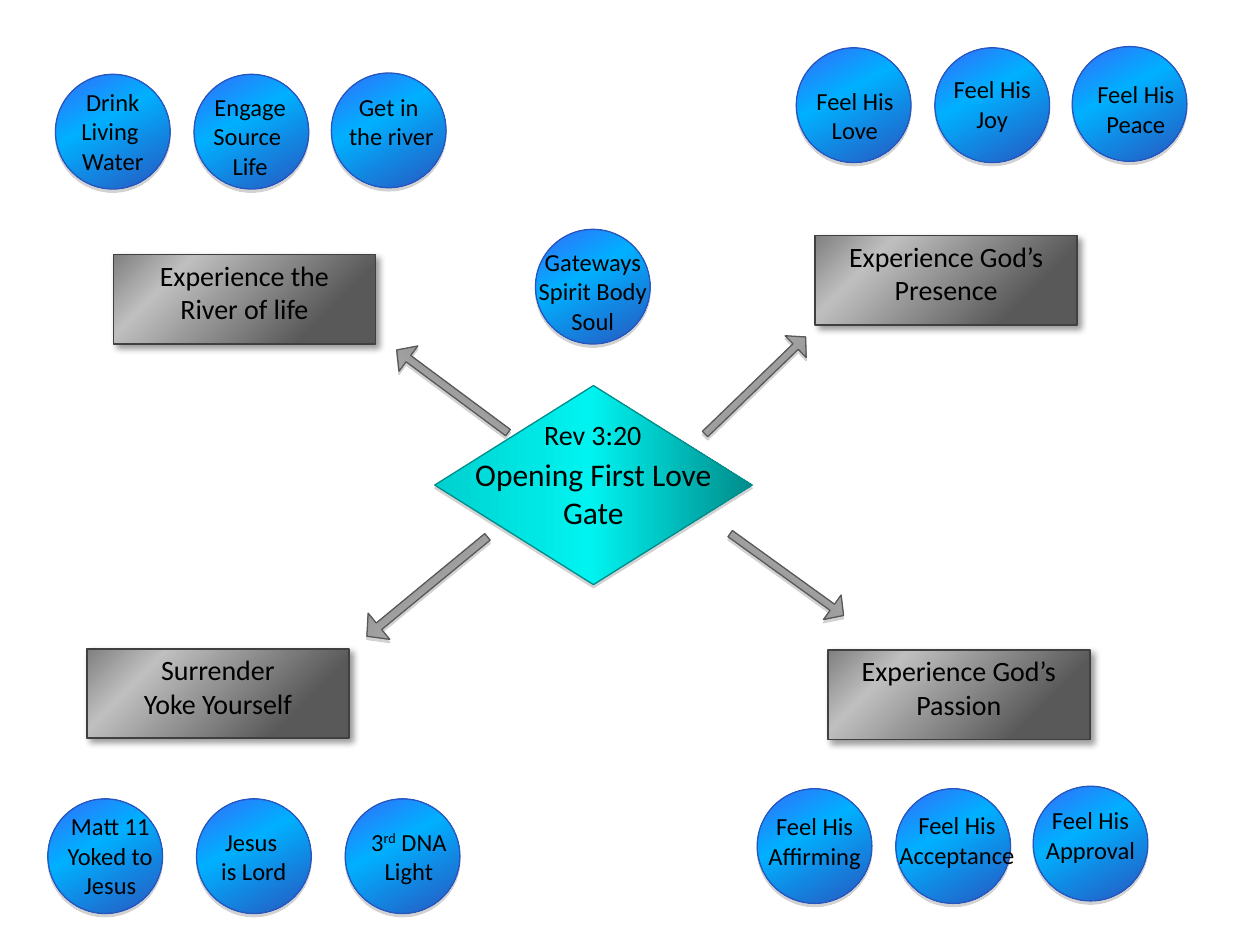
import pptx
import pptx.util
import pptx.dml.color
import pptx.enum.shapes
import pptx.enum.text
import pptx.oxml.ns
from lxml import etree

Inches = pptx.util.Inches
Pt = pptx.util.Pt
SHAPE = pptx.enum.shapes.MSO_SHAPE
qn = pptx.oxml.ns.qn

COLOURS = {
    "text": "000000", "soft_shadow": "808080", "hard_shadow": "000000",
    "blue_top": "336FFA", "blue_mid": "00B0FF", "blue_end": "2856BF",
    "cyan_start": "00D1CF", "cyan_mid": "00F3F0", "cyan_end": "008C8B",
    "grey_dark": "595959", "grey_light": "BFBFBF", "grey_mid": "808080",
    "grey_edge": "404040", "arrow_end": "7F7F7F",
}

# Shadow: colour, opacity %, blur pt, distance pt, direction in degrees
SOFT = ("soft_shadow", 35, 0, 1.8, 90)
HARD = ("hard_shadow", 40, 4, 3, 45)

# Gradient stops, gradient angle, outline and shadow of each kind of shape
LOOKS = {
    "circle": dict(stops=[(0, "blue_top"), (2, "blue_top"), (40, "blue_mid"), (100, "blue_end")],
                   angle=61, line=("blue_end", 0.75), shadow=SOFT),
    "diamond": dict(stops=[(0, "cyan_start"), (49, "cyan_mid"), (100, "cyan_end")],
                    angle=0, line=("cyan_end", 0.75), shadow=SOFT),
    "box": dict(stops=[(22, "grey_dark"), (77, "grey_light"), (100, "grey_mid")],
                angle=225, line=("grey_edge", 1), shadow=HARD),
    "arrow": dict(stops=[(0, "grey_light"), (100, "arrow_end")],
                  angle=90, line=("grey_dark", 0.75), shadow=SOFT),
}


class Diagram:
    font = "Calibri"
    line_height = 1.22 / 72

    def __init__(self, page):
        self.page = page

    def colour(self, name):
        return pptx.dml.color.RGBColor.from_string(COLOURS[name])

    def add_colour(self, parent, name):
        return etree.SubElement(parent, qn("a:srgbClr"), val=COLOURS[name])

    def shape(self, preset, look, left, top, width, height):
        style = LOOKS[look]
        shape = self.page.shapes.add_shape(
            preset, Inches(left), Inches(top), Inches(width), Inches(height))
        line_colour, line_width = style["line"]
        shape.line.color.rgb = self.colour(line_colour)
        shape.line.width = Pt(line_width)

        # Gradient fill
        shape.fill.gradient()
        gradient = shape.element.spPr.find(qn("a:gradFill"))
        for child in list(gradient):
            gradient.remove(child)
        stops = etree.SubElement(gradient, qn("a:gsLst"))
        for position, name in style["stops"]:
            self.add_colour(etree.SubElement(stops, qn("a:gs"), pos=str(position * 1000)), name)
        etree.SubElement(gradient, qn("a:lin"), ang=str(style["angle"] * 60000), scaled="0")

        # Shadow
        shape.shadow.inherit = False
        name, opacity, blur, distance, direction = style["shadow"]
        shadow = etree.SubElement(
            shape.element.spPr.find(qn("a:effectLst")), qn("a:outerShdw"),
            blurRad=str(int(Pt(blur))), dist=str(int(Pt(distance))),
            dir=str(direction * 60000), algn="ctr", rotWithShape="0")
        etree.SubElement(self.add_colour(shadow, name), qn("a:alpha"), val=str(opacity * 1000))
        return shape

    def label(self, left, top, width, lines, size, text):
        """Paragraphs split at a newline, lines at a vertical tab, superscript between carets."""
        box = self.page.shapes.add_textbox(
            Inches(left), Inches(top), Inches(width), Inches(lines * size * self.line_height))
        frame = box.text_frame
        settings = dict(word_wrap=True, margin_left=0, margin_right=0, margin_top=0,
                        margin_bottom=0, auto_size=pptx.enum.text.MSO_AUTO_SIZE.SHAPE_TO_FIT_TEXT)
        for key, value in settings.items():
            setattr(frame, key, value)
        for number, content in enumerate(text.split("\n")):
            para = frame.add_paragraph() if number else frame.paragraphs[0]
            para.alignment = pptx.enum.text.PP_ALIGN.CENTER
            for row, line in enumerate(content.split("\v")):
                if row:
                    para.add_line_break()
                for index, part in enumerate(line.split("^")):
                    self.span(para, part, size, raised=index % 2 == 1)

    def span(self, para, text, size, raised):
        span = para.add_run()
        span.text = text
        for key, value in dict(name=self.font, size=Pt(size)).items():
            setattr(span.font, key, value)
        span.font.color.rgb = self.colour("text")
        if raised:
            span.font._element.set("baseline", "30000")

    def circle(self, left, top, label_left, label_top, lines, text):
        self.shape(SHAPE.OVAL, "circle", left, top, 0.91, 0.91)
        self.label(label_left, label_top, 1.01, lines, 14, text)

    def box(self, left, top, label_width, text):
        width = 2.08
        self.shape(SHAPE.RECTANGLE, "box", left, top, width, 0.71)
        self.label(left + (width - label_width) / 2, top + 0.03, label_width, 2, 16, text)

    def arrow(self, left, top, width, height, rotation):
        arrow = self.shape(SHAPE.RIGHT_ARROW, "arrow", left, top, width, height)
        arrow.rotation = rotation
        arrow.adjustments[0] = 0.25
        arrow.adjustments[1] = 0.46


# left, top, label width, text
BOXES = [
    (0.9, 2.02, 1.57, "Experience the River of life"),
    (6.47, 1.87, 1.83, "Experience God’s Presence"),
    (0.69, 5.15, 1.57, "Surrender\nYoke Yourself"),
    (6.57, 5.16, 1.57, "Experience God’s\vPassion"),
]

# left, top, width, height, rotation
ARROWS = [
    (3.04, 2.98, 1.1, 0.25, 216.6),
    (2.77, 4.52, 1.24, 0.27, 140.5),
    (5.69, 4.44, 1.11, 0.24, 35.8),
    (5.44, 2.94, 1.11, 0.24, 316),
]

# left, top, label left, label top, label lines, text
CIRCLES = [
    # River of life
    (0.44, 0.59, 0.39, 0.69, 3, "Drink\vLiving \vWater"),
    (1.54, 0.59, 1.48, 0.73, 3, "Engage\vSource \vLife"),
    (2.63, 0.58, 2.58, 0.73, 2, "Get in\v the river"),
    # Presence
    (6.32, 0.38, 6.28, 0.68, 2, "Feel His Love"),
    (7.42, 0.38, 7.37, 0.59, 2, "Feel His\vJoy"),
    (8.51, 0.37, 8.51, 0.63, 2, "Feel His\vPeace"),
    # Surrender
    (0.38, 6.34, 0.37, 6.44, 3, "Matt 11\nYoked to Jesus"),
    (1.56, 6.34, 1.51, 6.56, 2, "Jesus \vis Lord"),
    (2.74, 6.34, 2.74, 6.56, 2, "3^rd^ DNA\nLight"),
    # Passion
    (6.01, 6.26, 5.96, 6.44, 2, "Feel His Affirming"),
    (7.11, 6.26, 7.09, 6.43, 2, "Feel His\vAcceptance"),
    (8.2, 6.24, 8.15, 6.39, 2, "Feel His\vApproval"),
    # Gateways
    (4.25, 1.82, 4.2, 1.96, 3, "Gateways\vSpirit Body\vSoul"),
]


def main():
    deck = pptx.Presentation()
    deck.slide_width, deck.slide_height = Inches(10), Inches(7.5)
    diagram = Diagram(deck.slides.add_slide(deck.slide_layouts[6]))

    # Central gate
    diagram.shape(SHAPE.DIAMOND, "diamond", 3.45, 3.06, 2.52, 1.58)
    diagram.label(4.2, 3.31, 1.01, 1, 16, "Rev 3:20")
    diagram.label(3.76, 3.61, 1.9, 2, 18, "Opening First Love Gate")

    # Four experiences, the arrows to them and the circles around
    for box in BOXES:
        diagram.box(*box)
    for arrow in ARROWS:
        diagram.arrow(*arrow)
    for circle in CIRCLES:
        diagram.circle(*circle)

    deck.save("out.pptx")


if __name__ == "__main__":
    main()
